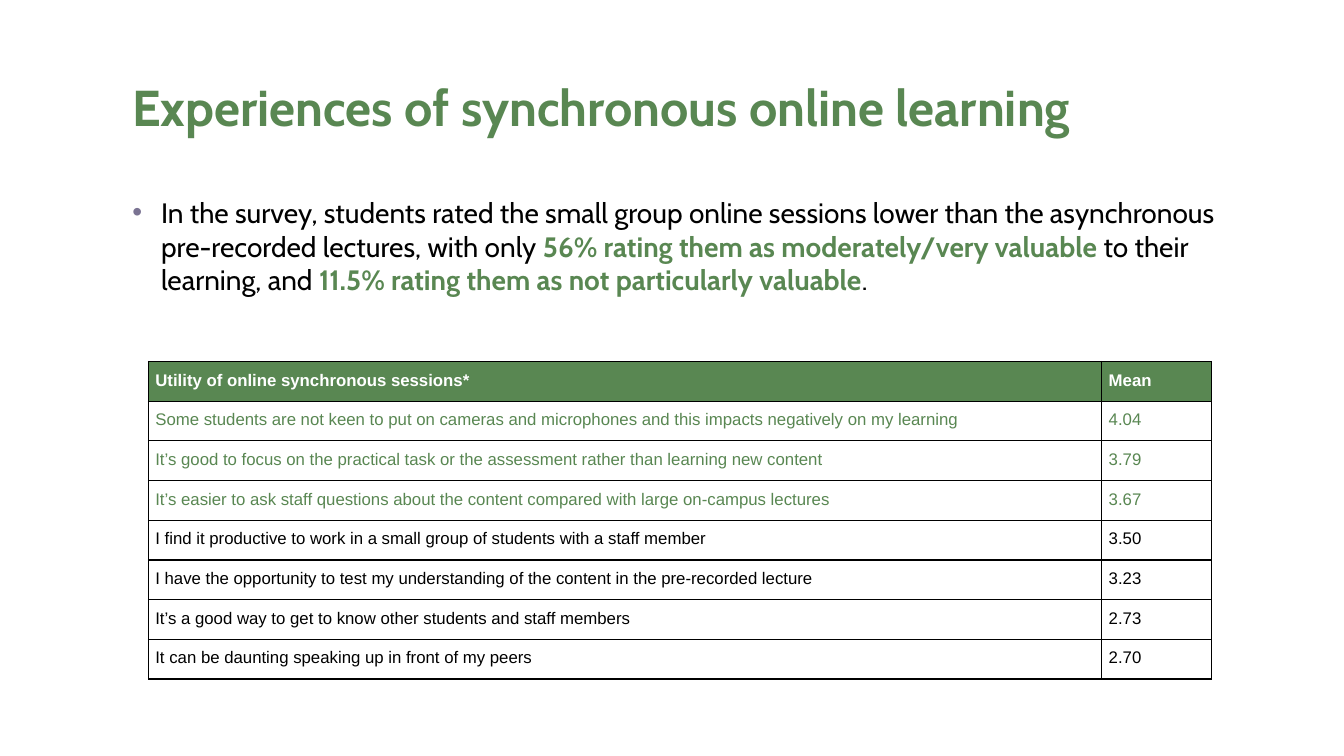
import pptx
import pptx.util
import pptx.dml.color
import pptx.enum.text
import pptx.oxml
import pptx.oxml.ns

COLOURS = {
    "green": "598752",
    "black": "000000",
    "white": "FFFFFF",
    "bullet": "7A7392",
}
HEADINGS = ("Utility of online synchronous sessions*", "Mean")
RATINGS = [
    ("Some students are not keen to put on cameras and microphones and this impacts negatively on my learning", "4.04"),
    ("It’s good to focus on the practical task or the assessment rather than learning new content", "3.79"),
    ("It’s easier to ask staff questions about the content compared with large on-campus lectures", "3.67"),
    ("I find it productive to work in a small group of students with a staff member", "3.50"),
    ("I have the opportunity to test my understanding of the content in the pre-recorded lecture", "3.23"),
    ("It’s a good way to get to know other students and staff members", "2.73"),
    ("It can be daunting speaking up in front of my peers", "2.70"),
]
HIGHLIGHTED_ROWS = 3
SURVEY_RUNS = [
    ("In the survey, students rated the small group online sessions lower than the asynchronous pre-recorded lectures, with only ", False),
    ("56% rating them as moderately/very valuable", True),
    (" to their learning, and ", False),
    ("11.5% rating them as not particularly valuable", True),
    (".", False),
]


def points(*lengths):
    return [pptx.util.Pt(length) for length in lengths]


def colour(name):
    return pptx.dml.color.RGBColor.from_string(COLOURS[name])


def xml(tag, attributes="", content=""):
    namespace = pptx.oxml.ns.nsdecls("a")
    return pptx.oxml.parse_xml(f"<a:{tag} {namespace} {attributes}>{content}</a:{tag}>")


class SlideBuilder:
    text_font = "Cabin"
    table_font = "Arial"

    def __init__(self, presentation):
        self.slide = presentation.slides.add_slide(presentation.slide_layouts[5])

    def style_font(self, font, name, size, colour_name, bold):
        font.name = name
        font.size = pptx.util.Pt(size)
        font.bold = bold
        font.color.rgb = colour(colour_name)

    def prepare_frame(self, frame):
        frame.word_wrap = True
        frame.auto_size = pptx.enum.text.MSO_AUTO_SIZE.NONE
        frame.vertical_anchor = pptx.enum.text.MSO_ANCHOR.TOP
        frame.margin_left = frame.margin_right = 0
        frame.margin_top = frame.margin_bottom = 0

    def title(self, text, left, top, width, height):
        shape = self.slide.shapes.title
        shape.left, shape.top, shape.width, shape.height = points(left, top, width, height)
        self.prepare_frame(shape.text_frame)
        shape.text_frame.text = text
        paragraph = shape.text_frame.paragraphs[0]
        paragraph.alignment = pptx.enum.text.PP_ALIGN.LEFT
        self.style_font(paragraph.font, self.text_font, 36, "green", True)

    def bullet(self, runs, left, top, width, height):
        shape = self.slide.shapes.add_textbox(*points(left, top, width, height))
        self.prepare_frame(shape.text_frame)
        paragraph = shape.text_frame.paragraphs[0]
        properties = paragraph._p.get_or_add_pPr()
        indent = pptx.util.Pt(20.5)
        properties.set("marL", str(indent))
        properties.set("indent", str(-indent))
        properties.append(xml("buClr", content=f'<a:srgbClr val="{COLOURS["bullet"]}"/>'))
        properties.append(xml("buFont", 'typeface="Arial"'))
        properties.append(xml("buChar", 'char="•"'))
        for text, emphasised in runs:
            run = paragraph.add_run()
            run.text = text
            self.style_font(run.font, self.text_font, 20, "green" if emphasised else "black", emphasised)

    def table(self, rows, left, top, column_widths, row_height):
        frame = self.slide.shapes.add_table(
            len(rows), len(column_widths),
            *points(left, top, sum(column_widths), row_height * len(rows)))
        table = frame.table
        table.horz_banding = False
        for column, width in zip(table.columns, column_widths):
            column.width = pptx.util.Pt(width)
        for row_index, row in enumerate(rows):
            table.rows[row_index].height = pptx.util.Pt(row_height)
            for column_index, text in enumerate(row):
                self.cell(table.cell(row_index, column_index), text, row_index)

    def cell(self, cell, text, row_index):
        header = row_index == 0
        cell.margin_left = cell.margin_right = pptx.util.Pt(5)
        cell.margin_top = cell.margin_bottom = 0
        if header:
            cell.fill.solid()
            cell.fill.fore_color.rgb = colour("green")
            text_colour = "white"
        else:
            cell.fill.background()
            text_colour = "green" if row_index <= HIGHLIGHTED_ROWS else "black"
        cell.text = text
        paragraph = cell.text_frame.paragraphs[0]
        paragraph.line_spacing = 1.5
        self.style_font(paragraph.font, self.table_font, 12, text_colour, header)
        self.cell_borders(cell)

    def cell_borders(self, cell):
        properties = cell._tc.get_or_add_tcPr()
        line = f'<a:solidFill><a:srgbClr val="{COLOURS["black"]}"/></a:solidFill>'
        for position, tag in enumerate(("lnL", "lnR", "lnT", "lnB")):
            properties.insert(position, xml(tag, f'w="{pptx.util.Pt(1)}"', line))


def main():
    presentation = pptx.Presentation()
    presentation.slide_width, presentation.slide_height = points(960, 540)
    builder = SlideBuilder(presentation)
    builder.title("Experiences of synchronous online learning", 94.5, 54, 782.5, 80)
    builder.bullet(SURVEY_RUNS, 94.5, 139.7, 782.5, 357)
    builder.table([HEADINGS, *RATINGS], 106, 258.2, (681, 78.5), 28.35)
    presentation.save("out.pptx")


if __name__ == "__main__":
    main()
